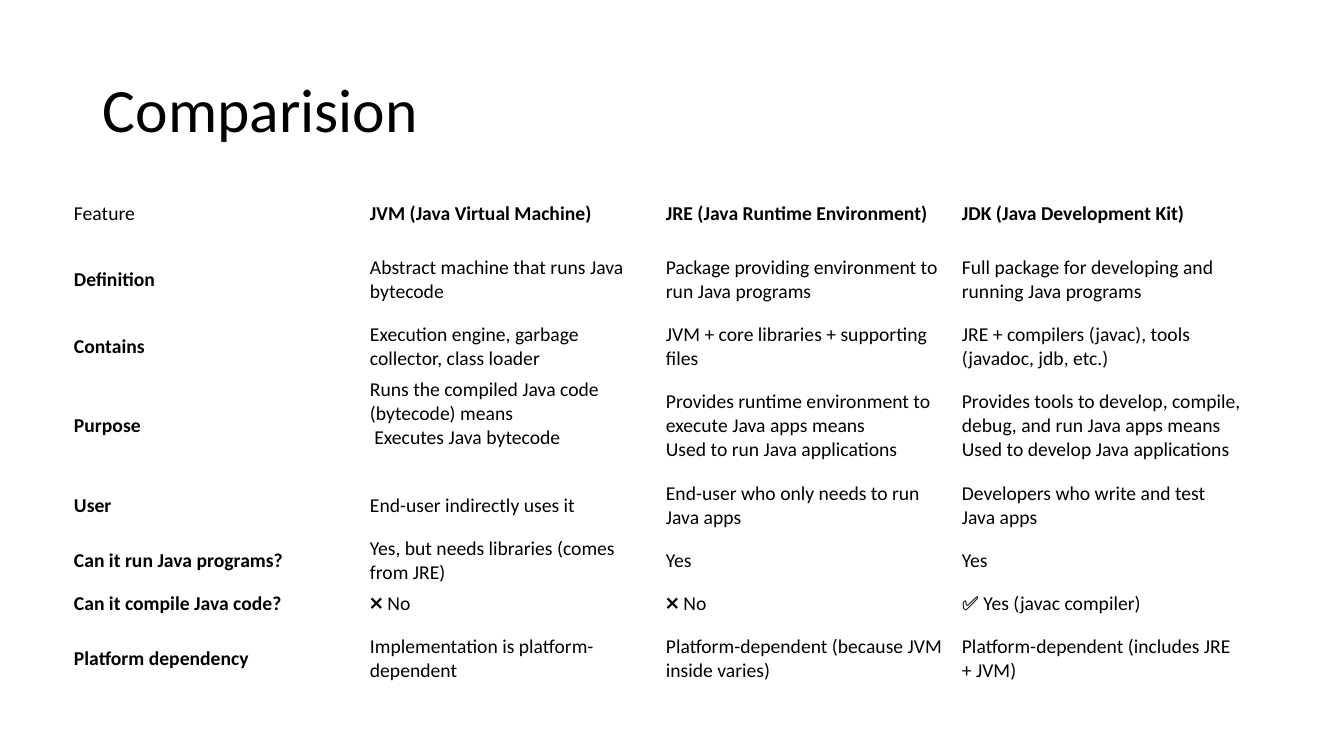
import pptx
import pptx.dml.color
import pptx.enum.text
import pptx.util

TITLE = "Comparision"
ROWS = [
    ("Feature", "JVM (Java Virtual Machine)", "JRE (Java Runtime Environment)",
     "JDK (Java Development Kit)"),
    ("Definition", "Abstract machine that runs Java bytecode",
     "Package providing environment to run Java programs",
     "Full package for developing and running Java programs"),
    ("Contains", "Execution engine, garbage collector, class loader",
     "JVM + core libraries + supporting files",
     "JRE + compilers (javac), tools (javadoc, jdb, etc.)"),
    ("Purpose", "Runs the compiled Java code (bytecode) means\n Executes Java bytecode",
     "Provides runtime environment to execute Java apps means\nUsed to run Java applications",
     "Provides tools to develop, compile, debug, and run Java apps means\n"
     "Used to develop Java applications"),
    ("User", "End-user indirectly uses it", "End-user who only needs to run Java apps",
     "Developers who write and test Java apps"),
    ("Can it run Java programs?", "Yes, but needs libraries (comes from JRE)", "Yes", "Yes"),
    ("Can it compile Java code?", "❌ No", "❌ No", "✅ Yes (javac compiler)"),
    ("Platform dependency", "Implementation is platform-dependent",
     "Platform-dependent (because JVM inside varies)",
     "Platform-dependent (includes JRE + JVM)"),
]
ROW_HEIGHTS = [54, 78, 54, 104, 55, 54, 32, 77]
COLUMN_WIDTH = 296
TABLE_LEFT, TABLE_TOP = 66, 187
CELL_MARGIN_X, CELL_MARGIN_Y = 8, 4
PURPOSE_ROW, JVM_COLUMN, LINE_HEIGHT = 3, 1, 24
COLORS = {"text": "000000"}
FONT = "Calibri"
MIDDLE = pptx.enum.text.MSO_ANCHOR.MIDDLE


def px(length):
    """Turn px into EMU at 100.8 px to the inch."""
    return pptx.util.Emu(round(length * 914400 / 100.8))


def write(frame, text, size, bold=False):
    frame.text = text
    frame.word_wrap = True
    for para in frame.paragraphs:
        para.font.name = FONT
        para.font.size = pptx.util.Pt(size)
        para.font.bold = bold
        para.font.color.rgb = pptx.dml.color.RGBColor.from_string(COLORS["text"])


def add_title(page):
    box = page.shapes.add_textbox(px(93), px(40), px(1159), px(146))
    write(box.text_frame, TITLE, 44)
    box.text_frame.vertical_anchor = MIDDLE
    box.text_frame.paragraphs[0].line_spacing = 0.9


def add_comparison(page):
    columns = len(ROWS[0])
    table = page.shapes.add_table(
        len(ROWS), columns, px(TABLE_LEFT), px(TABLE_TOP),
        px(columns * COLUMN_WIDTH), px(sum(ROW_HEIGHTS))).table
    table.first_row = table.horz_banding = False
    for column in table.columns:
        column.width = px(COLUMN_WIDTH)
    for r, texts in enumerate(ROWS):
        table.rows[r].height = px(ROW_HEIGHTS[r])
        for c, text in enumerate(texts):
            cell = table.cell(r, c)
            cell.fill.background()
            cell.vertical_anchor = MIDDLE
            cell.margin_left = cell.margin_right = px(CELL_MARGIN_X)
            cell.margin_top = cell.margin_bottom = px(CELL_MARGIN_Y)
            # Headings run along the top and left edges, except in the corner.
            write(cell.text_frame, text, 14, bold=(r == 0) != (c == 0))
    # This text sits one line higher than its neighbours.
    table.cell(PURPOSE_ROW, JVM_COLUMN).margin_bottom = px(CELL_MARGIN_Y + LINE_HEIGHT)


def main():
    deck = pptx.Presentation()
    deck.slide_width, deck.slide_height = px(1344), px(756)
    page = deck.slides.add_slide(deck.slide_layouts[6])
    add_title(page)
    add_comparison(page)
    deck.save("out.pptx")


if __name__ == "__main__":
    main()
